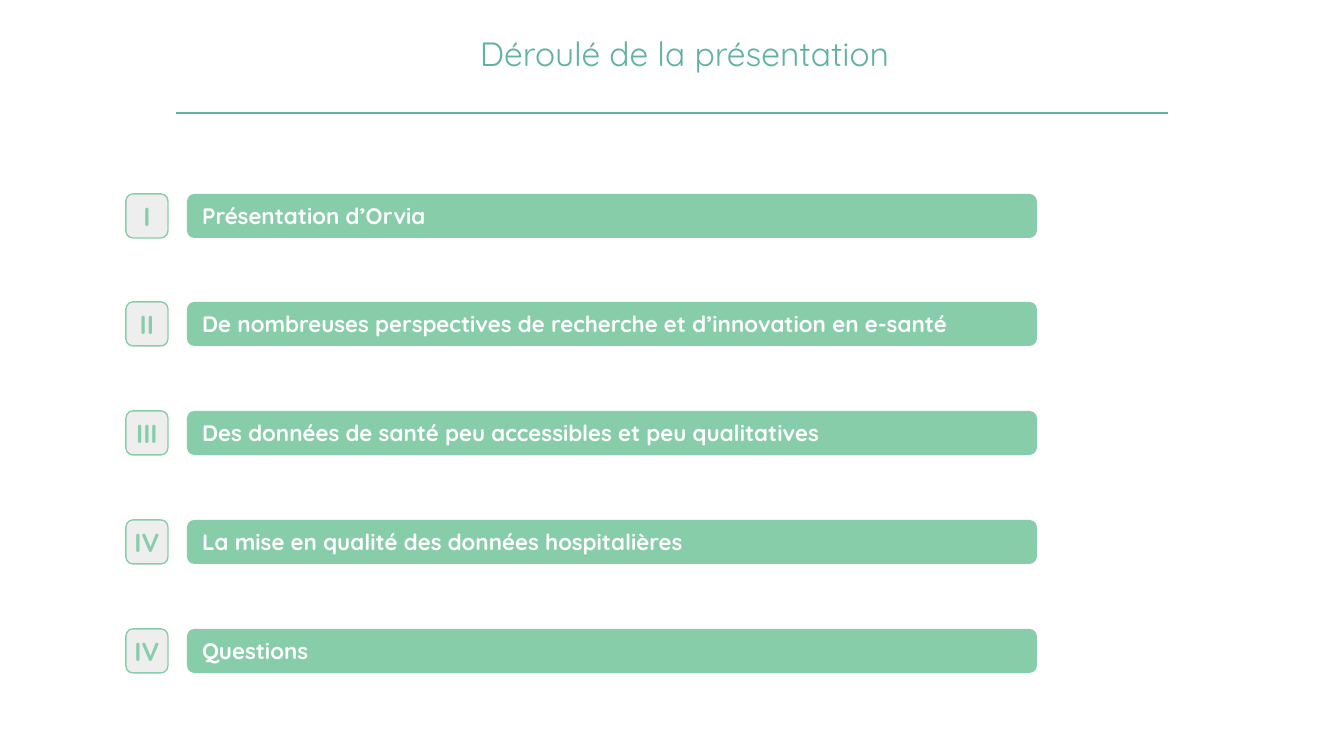
import dataclasses

import pptx
import pptx.dml.color
import pptx.enum.shapes
import pptx.enum.text
import pptx.oxml.ns
import pptx.shapes.autoshape
import pptx.slide
import pptx.text.text
import pptx.util
from lxml import etree

SLIDE_WIDTH = 1344
SLIDE_HEIGHT = 756
EMU_PER_PX = 914400 / 134.4


@dataclasses.dataclass(frozen=True)
class Theme:
    font: str = "Quicksand"
    teal: str = "60B2A2"
    green: str = "87CDAA"
    grey: str = "EEEEEE"
    white: str = "FFFFFF"
    title_size: int = 18
    badge_size: int = 14
    bar_size: int = 12
    line_width: float = 0.75
    corner: float = 0.167


@dataclasses.dataclass(frozen=True)
class Box:
    left: int
    top: int
    width: int
    height: int


@dataclasses.dataclass(frozen=True)
class AgendaItem:
    numeral: str
    label: str


THEME = Theme()
TITLE = "Déroulé de la présentation"
TITLE_BOX = Box(58, 23, 1253, 81)
RULE_LEFT, RULE_RIGHT, RULE_TOP = 176, 1168, 113
FIRST_ROW_TOP, LAST_ROW_TOP, ROW_HEIGHT = 194, 629, 44
BADGE_LEFT, BADGE_WIDTH = 126, 42
BAR_LEFT, BAR_WIDTH = 187, 850
INSET = 13

AGENDA = [
    AgendaItem("I", "Présentation d’Orvia"),
    AgendaItem("II", "De nombreuses perspectives de recherche et d’innovation en e-santé"),
    AgendaItem("III", "Des données de santé peu accessibles et peu qualitatives"),
    AgendaItem("IV", "La mise en qualité des données hospitalières"),
    AgendaItem("IV", "Questions"),
]


def px(length: int) -> pptx.util.Emu:
    return pptx.util.Emu(round(length * EMU_PER_PX))


def rgb(color: str) -> pptx.dml.color.RGBColor:
    return pptx.dml.color.RGBColor.from_string(color)


def set_text(
    text_frame: pptx.text.text.TextFrame,
    text: str,
    size: int,
    color: str,
    bold: bool,
    alignment: pptx.enum.text.PP_ALIGN,
    anchor: pptx.enum.text.MSO_ANCHOR,
    inset: int,
) -> pptx.text.text._Paragraph:
    text_frame.word_wrap = True
    text_frame.auto_size = pptx.enum.text.MSO_AUTO_SIZE.NONE
    text_frame.vertical_anchor = anchor
    text_frame.margin_left = text_frame.margin_right = px(inset)
    text_frame.margin_top = text_frame.margin_bottom = px(inset)
    text_frame.text = text
    paragraph = text_frame.paragraphs[0]
    paragraph.alignment = alignment
    paragraph.font.name = THEME.font
    paragraph.font.size = pptx.util.Pt(size)
    paragraph.font.bold = bold
    paragraph.font.color.rgb = rgb(color)
    return paragraph


def add_title(slide: pptx.slide.Slide) -> None:
    title = slide.shapes.title
    title.left, title.top = px(TITLE_BOX.left), px(TITLE_BOX.top)
    title.width, title.height = px(TITLE_BOX.width), px(TITLE_BOX.height)
    paragraph = set_text(
        title.text_frame, TITLE, THEME.title_size, THEME.teal, False,
        pptx.enum.text.PP_ALIGN.CENTER, pptx.enum.text.MSO_ANCHOR.TOP, INSET,
    )
    paragraph.line_spacing = 0.95
    paragraph.space_before = pptx.util.Pt(0)


def add_rule(slide: pptx.slide.Slide) -> None:
    rule = slide.shapes.add_connector(
        pptx.enum.shapes.MSO_CONNECTOR.STRAIGHT,
        px(RULE_LEFT), px(RULE_TOP), px(RULE_RIGHT), px(RULE_TOP),
    )
    rule.line.color.rgb = rgb(THEME.teal)
    rule.line.width = pptx.util.Pt(THEME.line_width)
    etree.SubElement(rule._element.spPr, pptx.oxml.ns.qn("a:effectLst"))


def add_rounded_box(
    slide: pptx.slide.Slide, box: Box, fill: str
) -> pptx.shapes.autoshape.Shape:
    shape = slide.shapes.add_shape(
        pptx.enum.shapes.MSO_SHAPE.ROUNDED_RECTANGLE,
        px(box.left), px(box.top), px(box.width), px(box.height),
    )
    shape.adjustments[0] = THEME.corner
    shape.shadow.inherit = False
    shape.fill.solid()
    shape.fill.fore_color.rgb = rgb(fill)
    shape.line.fill.background()
    return shape


def add_agenda_row(slide: pptx.slide.Slide, item: AgendaItem, top: int) -> None:
    bar = add_rounded_box(slide, Box(BAR_LEFT, top, BAR_WIDTH, ROW_HEIGHT), THEME.green)
    set_text(
        bar.text_frame, item.label, THEME.bar_size, THEME.white, True,
        pptx.enum.text.PP_ALIGN.LEFT, pptx.enum.text.MSO_ANCHOR.MIDDLE, INSET,
    )
    badge = add_rounded_box(slide, Box(BADGE_LEFT, top, BADGE_WIDTH, ROW_HEIGHT), THEME.grey)
    badge.line.color.rgb = rgb(THEME.green)
    badge.line.width = pptx.util.Pt(THEME.line_width)
    set_text(
        badge.text_frame, item.numeral, THEME.badge_size, THEME.green, True,
        pptx.enum.text.PP_ALIGN.CENTER, pptx.enum.text.MSO_ANCHOR.MIDDLE, 0,
    )


def main() -> None:
    presentation = pptx.Presentation()
    presentation.slide_width = px(SLIDE_WIDTH)
    presentation.slide_height = px(SLIDE_HEIGHT)
    title_only = presentation.slide_layouts.get_by_name("Title Only")
    slide = presentation.slides.add_slide(title_only)
    add_title(slide)
    add_rule(slide)
    for index, item in enumerate(AGENDA):
        offset = (LAST_ROW_TOP - FIRST_ROW_TOP) * index // (len(AGENDA) - 1)
        add_agenda_row(slide, item, FIRST_ROW_TOP + offset)
    presentation.save("out.pptx")


if __name__ == "__main__":
    main()
